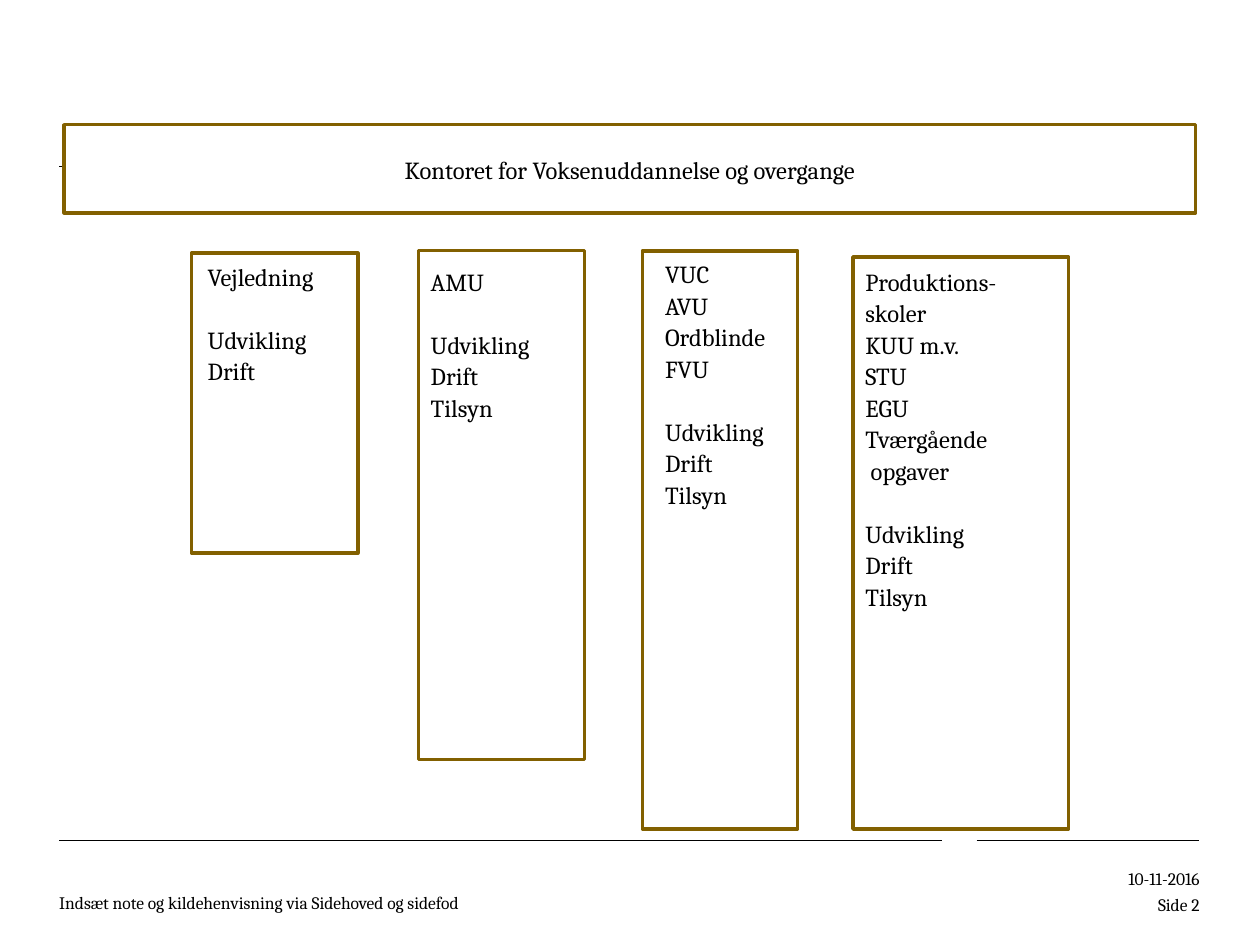
from lxml import etree
from pptx import Presentation
from pptx import util as u
from pptx.dml.color import RGBColor
from pptx.enum import shapes, text
from pptx.oxml.ns import qn

COLOURS = {"ink": "000000", "paper": "FFFFFF", "frame": "826000"}
FONT = "Cambria"
ALIGN = text.PP_ALIGN
ANCHOR = text.MSO_ANCHOR


def colour(name):
    return RGBColor.from_string(COLOURS[name])


def write(frame, groups, size=14, leading=18, align=ALIGN.LEFT,
          anchor=ANCHOR.TOP, insets=(0.1, 0.05, 0.1, 0.05)):
    """Fill a frame with groups of lines, one empty line's height between groups."""
    frame.word_wrap = True
    frame.vertical_anchor = anchor
    (frame.margin_left, frame.margin_top,
     frame.margin_right, frame.margin_bottom) = map(u.Inches, insets)
    paragraph = None
    for group in groups:
        for row, line in enumerate(group):
            new_group = paragraph is not None and row == 0
            paragraph = frame.add_paragraph() if paragraph is not None else frame.paragraphs[0]
            paragraph.alignment = align
            paragraph.line_spacing = u.Pt(leading)
            if new_group:
                paragraph.space_before = u.Pt(leading)
            run = paragraph.add_run()
            run.text = line
            run.font.name = FONT
            run.font.size = u.Pt(size)
            run.font.color.rgb = colour("ink")


class Board:
    """The slide as a grid of 100 columns and 75 rows."""
    columns, rows = 100, 75
    frame_width, rule_width = 2, 0.5

    def __init__(self, deck):
        self.cell_w = deck.slide_width / self.columns
        self.cell_h = deck.slide_height / self.rows
        self.slide = deck.slides.add_slide(deck.slide_layouts[6])

    def place(self, left, top, width, height):
        return (round(left * self.cell_w), round(top * self.cell_h),
                round(width * self.cell_w), round(height * self.cell_h))

    def rule(self, start, end, row):
        x, y, length, _ = self.place(start, row, end - start, 0)
        line = self.slide.shapes.add_connector(
            shapes.MSO_CONNECTOR.STRAIGHT, x, y, x + length, y)
        line.line.color.rgb = colour("ink")
        line.line.width = u.Pt(self.rule_width)
        etree.SubElement(line._element.spPr, qn("a:effectLst"))

    def box(self, *area):
        box = self.slide.shapes.add_shape(
            shapes.MSO_SHAPE.RECTANGLE, *self.place(*area))
        box.shadow.inherit = False
        box.fill.solid()
        box.fill.fore_color.rgb = colour("paper")
        box.line.color.rgb = colour("frame")
        box.line.width = u.Pt(self.frame_width)
        return box

    def label(self, area, groups, **style):
        label = self.slide.shapes.add_textbox(*self.place(*area))
        write(label.text_frame, groups, **style)


def main():
    deck = Presentation()
    deck.slide_width, deck.slide_height = u.Inches(10), u.Inches(7.5)
    board = Board(deck)

    # Rules
    for start, end, row in [(4.7, 74.8, 66.7), (77.5, 95.2, 66.7), (4.7, 24.4, 13.2)]:
        board.rule(start, end, row)

    # Footer
    footer = dict(size=10, leading=14, anchor=ANCHOR.BOTTOM)
    right = dict(footer, align=ALIGN.RIGHT, insets=(0.1, 0.05, 0, 0))
    board.label((77.5, 68.6, 17.7, 2), [["10-11-2016"]], **right)
    board.label((4.7, 68.6, 70.1, 3.9),
                [["Indsæt note og kildehenvisning via Sidehoved og sidefod"]],
                insets=(0, 0.05, 0.1, 0), **footer)
    board.label((77.5, 70.6, 17.7, 2), [["Side 2"]], **right)

    # Teams: frame, text area, subjects and tasks
    tasks = ["Udvikling", "Drift", "Tilsyn"]
    teams = [
        ((15.2, 20.1, 13.2, 23.8), (15.5, 20.1, 12.8, 13.1),
         ["Vejledning"], tasks[:2]),
        ((33.2, 19.9, 13.2, 40.4), (33.2, 20.5, 11.5, 19.2),
         ["AMU"], tasks),
        ((67.7, 20.4, 17.1, 45.4), (67.7, 20.5, 16.3, 31.3),
         ["Produktions-", "skoler", "KUU m.v.", "STU", "EGU", "Tværgående", " opgaver"],
         tasks),
        ((51, 19.9, 12.3, 45.9), (51.8, 19.9, 12.3, 25.2),
         ["VUC", "AVU", "Ordblinde", "FVU"], tasks),
    ]
    for frame, text_area, subjects, duties in teams:
        board.box(*frame)
        board.label(text_area, [subjects, duties])

    # Office heading
    office = board.box(5.1, 9.9, 89.8, 7)
    write(office.text_frame, [["Kontoret for Voksenuddannelse og overgange"]],
          align=ALIGN.CENTER, anchor=ANCHOR.MIDDLE)

    deck.save("out.pptx")


if __name__ == "__main__":
    main()
